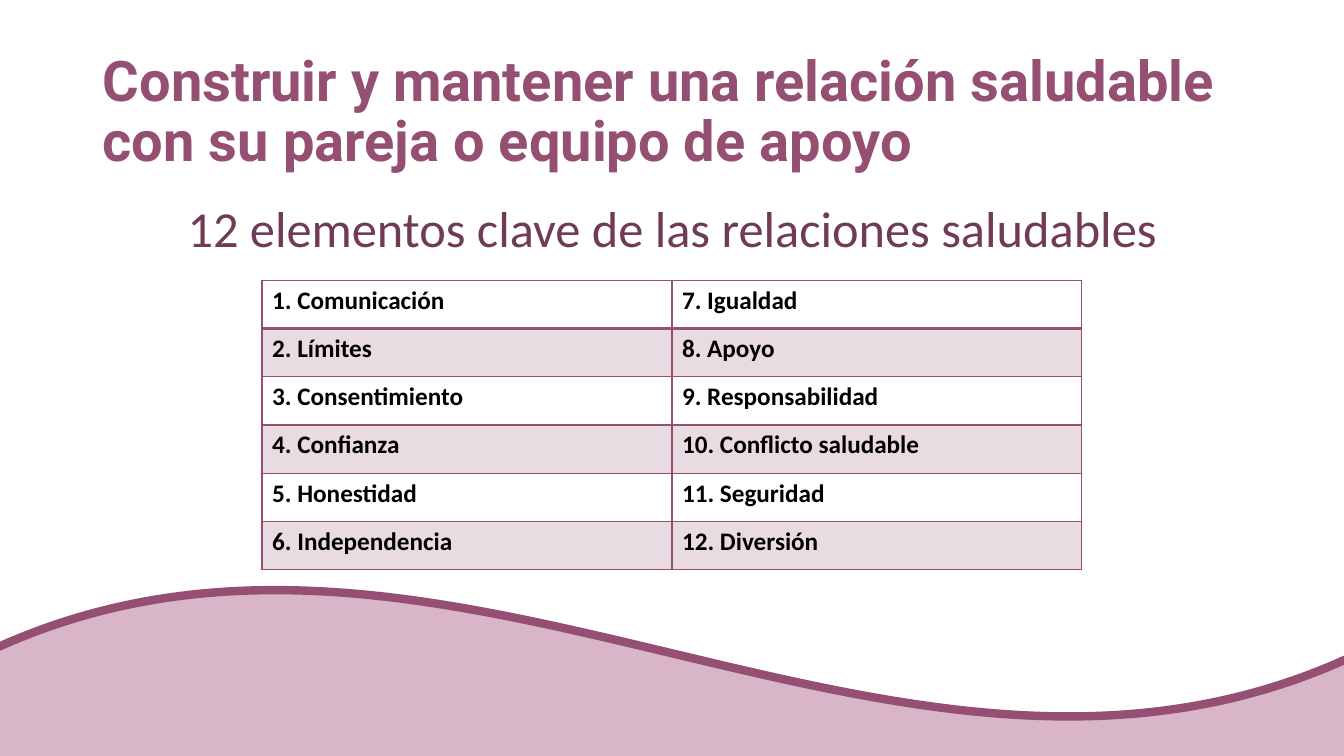
import dataclasses

import pptx
import pptx.dml.color
import pptx.enum.shapes
import pptx.enum.text
import pptx.oxml
import pptx.oxml.ns
import pptx.util


@dataclasses.dataclass(frozen=True)
class Theme:
    plum: str = "954F72"
    dark_plum: str = "703B56"
    pink: str = "D8B5C7"
    black: str = "000000"
    heading_font: str = "Roboto"
    body_font: str = "Calibri"
    title_size: int = 40
    subtitle_size: int = 36
    table_size: int = 18
    band_opacity: int = 20
    wave_line: int = 6


class SlideBuilder:
    def __init__(self, presentation, theme):
        self.theme = theme
        self.width = presentation.slide_width
        self.height = presentation.slide_height
        self.slide = presentation.slides.add_slide(presentation.slide_layouts[1])

    def place(self, left, top, width, height):
        return {
            "left": round(self.width * left / 100),
            "top": round(self.height * top / 100),
            "width": round(self.width * width / 100),
            "height": round(self.height * height / 100),
        }

    def apply(self, target, values):
        for name, value in values.items():
            setattr(target, name, value)

    def color(self, value):
        return pptx.dml.color.RGBColor.from_string(value)

    def add_text(self, paragraph, text, font, size, color, bold, **layout):
        run = paragraph.add_run()
        run.text = text
        self.apply(paragraph, layout)
        self.apply(run.font, {"name": font, "size": pptx.util.Pt(size), "bold": bold})
        run.font.color.rgb = self.color(color)

    def wave(self, area):
        box = self.place(*area)
        shape = self.slide.shapes.add_shape(pptx.enum.shapes.MSO_SHAPE.WAVE, **box)
        shape.shadow.inherit = False
        shape.fill.solid()
        shape.fill.fore_color.rgb = self.color(self.theme.pink)
        shape.line.color.rgb = self.color(self.theme.plum)
        shape.line.width = pptx.util.Pt(self.theme.wave_line)
        self.slide.shapes.element.insert(2, shape.element)

    def placeholder(self, index, area, anchor):
        shape = self.slide.placeholders[index]
        self.apply(shape, self.place(*area))
        self.apply(shape.text_frame, {
            "word_wrap": True,
            "auto_size": pptx.enum.text.MSO_AUTO_SIZE.NONE,
            "vertical_anchor": anchor,
        })
        return shape.text_frame.paragraphs[0]

    def title(self, text, area):
        paragraph = self.placeholder(0, area, pptx.enum.text.MSO_ANCHOR.MIDDLE)
        self.add_text(paragraph, text, self.theme.heading_font, self.theme.title_size,
                      self.theme.plum, True,
                      alignment=pptx.enum.text.PP_ALIGN.LEFT, line_spacing=0.9)

    def subtitle(self, text, area):
        paragraph = self.placeholder(1, area, pptx.enum.text.MSO_ANCHOR.TOP)
        properties = paragraph._p.get_or_add_pPr()
        properties.set("marL", "0")
        properties.set("indent", "0")
        properties.append(pptx.oxml.parse_xml(
            f'<a:buNone {pptx.oxml.ns.nsdecls("a")}/>'))
        self.add_text(paragraph, text, self.theme.body_font, self.theme.subtitle_size,
                      self.theme.dark_plum, False,
                      alignment=pptx.enum.text.PP_ALIGN.CENTER, line_spacing=1.1,
                      space_before=pptx.util.Pt(0), space_after=pptx.util.Pt(12))

    def borders(self, cell, widths):
        properties = cell._tc.get_or_add_tcPr()
        for position, (side, width) in enumerate(widths.items()):
            properties.insert(position, pptx.oxml.parse_xml(
                f'<a:ln{side} {pptx.oxml.ns.nsdecls("a")} w="{pptx.util.Pt(width)}">'
                f'<a:solidFill><a:srgbClr val="{self.theme.plum}"/></a:solidFill>'
                f'</a:ln{side}>'))

    def band(self, cell):
        cell.fill.solid()
        cell.fill.fore_color.rgb = self.color(self.theme.plum)
        color = cell._tc.tcPr.find(".//" + pptx.oxml.ns.qn("a:srgbClr"))
        color.append(pptx.oxml.parse_xml(
            f'<a:alpha {pptx.oxml.ns.nsdecls("a")} val="{self.theme.band_opacity * 1000}"/>'))

    def table(self, items, columns, area):
        rows = len(items) // columns
        table = self.slide.shapes.add_table(rows, columns, **self.place(*area)).table
        self.apply(table, {"first_row": False, "horz_banding": False})
        for index, item in enumerate(items):
            column, row = divmod(index, rows)
            cell = table.cell(row, column)
            self.add_text(cell.text_frame.paragraphs[0], f"{index + 1}. {item}",
                          self.theme.body_font, self.theme.table_size,
                          self.theme.black, True)
            if row % 2:
                self.band(cell)
            else:
                cell.fill.background()
            self.borders(cell, {"L": 1, "R": 1,
                                "T": 2 if row == 1 else 1,
                                "B": 2 if row == 0 else 1})


def main():
    presentation = pptx.Presentation()
    presentation.slide_width = pptx.util.Inches(13.33)
    presentation.slide_height = pptx.util.Inches(7.5)
    builder = SlideBuilder(presentation, Theme())
    builder.wave((-1.13, 77.73, 102.25, 69.47))
    builder.title("Construir y mantener una relación saludable con su pareja o equipo de apoyo",
                  (6.9, 5.33, 91.75, 19.33))
    builder.subtitle("12 elementos clave de las relaciones saludables",
                     (6.9, 24.67, 86.27, 45.2))
    elements = ["Comunicación", "Límites", "Consentimiento", "Confianza",
                "Honestidad", "Independencia", "Igualdad", "Apoyo",
                "Responsabilidad", "Conflicto saludable", "Seguridad", "Diversión"]
    builder.table(elements, 2, (19.5, 37.07, 61, 38.27))
    presentation.save("out.pptx")


if __name__ == "__main__":
    main()
